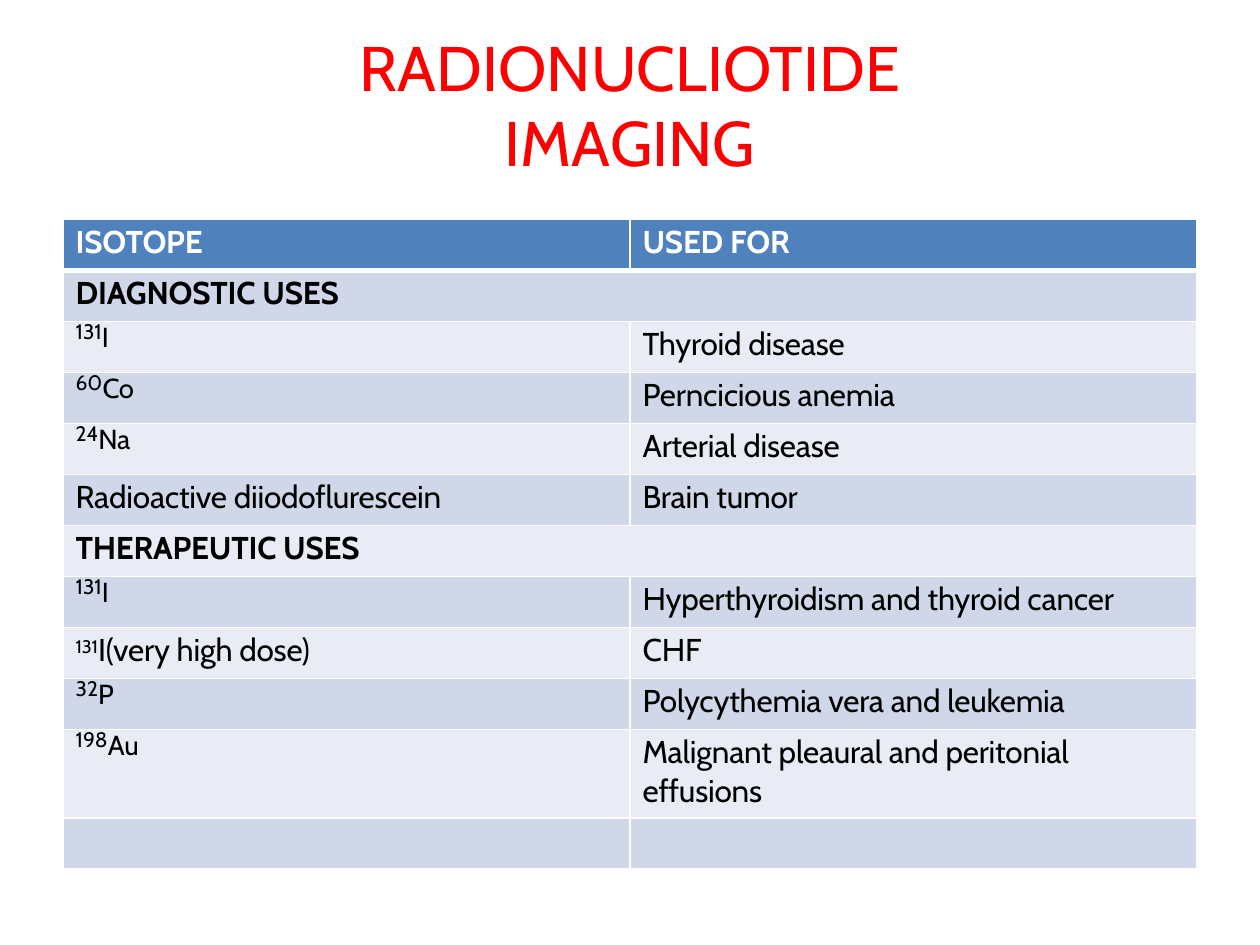
import dataclasses
import typing

import lxml.etree
import pptx
import pptx.dml.color
import pptx.enum.text
import pptx.oxml.ns
import pptx.util

Inches = pptx.util.Inches
Pt = pptx.util.Pt

FONT = "Cabin"
COLORS = {
    "title": "FF0000",
    "header": "4F81BC",
    "dark band": "D0D7E8",
    "light band": "E9ECF4",
    "white": "FFFFFF",
    "black": "000000",
}
TABLE_HEIGHT = 5.16
TALL_ROW = 0.7


@dataclasses.dataclass(frozen=True)
class Span:
    text: str
    size: int = 18
    bold: bool = False
    color: str = "black"
    baseline: int = 0
    spacing: int = -10


@dataclasses.dataclass(frozen=True)
class Entry:
    lines: tuple[tuple[Span, ...], ...]
    space_before: float = 2.5
    top: float = 0.03
    line_spacing: typing.Optional[float] = None


@dataclasses.dataclass(frozen=True)
class Row:
    entries: tuple[Entry, ...]
    height: typing.Optional[float] = None


def words(*lines: str, **style: typing.Any) -> Entry:
    return Entry(tuple((Span(line, **style),) for line in lines))


def isotope(mass: str, symbol: str) -> Entry:
    spans = (Span(mass, size=12, spacing=0), Span(symbol, size=27, baseline=-17, spacing=0))
    return Entry((spans,), space_before=0, top=0, line_spacing=18.6)


def section(text: str) -> Row:
    return Row((words(text, bold=True),))


HIGH_DOSE = Entry(((Span("131", baseline=25), Span("I(very high dose)")),))

ROWS = (
    Row((words("ISOTOPE", bold=True, color="white"), words("USED FOR", bold=True, color="white"))),
    section("DIAGNOSTIC USES"),
    Row((isotope("131", "I"), words("Thyroid disease"))),
    Row((isotope("60", "Co"), words("Perncicious anemia"))),
    Row((isotope("24", "Na"), words("Arterial disease"))),
    Row((words("Radioactive diiodoflurescein"), words("Brain tumor"))),
    section("THERAPEUTIC USES"),
    Row((isotope("131", "I"), words("Hyperthyroidism and thyroid cancer"))),
    Row((HIGH_DOSE, words("CHF"))),
    Row((isotope("32", "P"), words("Polycythemia vera and leukemia"))),
    Row((isotope("198", "Au"), words("Malignant pleaural and peritonial", "effusions")), TALL_ROW),
    Row((words(), words())),
)


def set_attributes(target: typing.Any, values: dict[str, typing.Any]) -> None:
    for name, value in values.items():
        setattr(target, name, value)


def rgb(name: str) -> pptx.dml.color.RGBColor:
    return pptx.dml.color.RGBColor.from_string(COLORS[name])


def add_span(para: typing.Any, span: Span) -> None:
    run = para.add_run()
    run.text = span.text
    set_attributes(run.font, {"name": FONT, "size": Pt(span.size), "bold": span.bold})
    run.font.color.rgb = rgb(span.color)
    properties = run.font._element
    if span.baseline:
        properties.set("baseline", str(span.baseline * 1000))
    if span.spacing:
        properties.set("spc", str(span.spacing))


def add_borders(cell: typing.Any, widths: dict[str, int]) -> None:
    properties = cell._tc.get_or_add_tcPr()
    qn = pptx.oxml.ns.qn
    for side, width in widths.items():
        line = lxml.etree.SubElement(properties, qn(f"a:ln{side}"), w=str(Pt(width)))
        fill = lxml.etree.SubElement(line, qn("a:solidFill"))
        lxml.etree.SubElement(fill, qn("a:srgbClr"), val=COLORS["white"])


def fill_cell(cell: typing.Any, entry: Entry) -> None:
    margins = {"margin_left": 0.1, "margin_right": 0, "margin_top": entry.top, "margin_bottom": 0}
    set_attributes(cell, {name: Inches(value) for name, value in margins.items()})
    frame = cell.text_frame
    for index, line in enumerate(entry.lines):
        para = frame.add_paragraph() if index else frame.paragraphs[0]
        para.alignment = pptx.enum.text.PP_ALIGN.LEFT
        para.space_before = Pt(0 if index else entry.space_before)
        if entry.line_spacing:
            para.line_spacing = Pt(entry.line_spacing)
        for span in line:
            add_span(para, span)


def add_isotope_table(page: typing.Any) -> None:
    frame = page.shapes.add_table(
        len(ROWS), 2, Inches(0.5), Inches(1.74), Inches(9), Inches(TABLE_HEIGHT)
    )
    table = frame.table
    normal_height = (TABLE_HEIGHT - TALL_ROW) / (len(ROWS) - 1)
    for index, row in enumerate(ROWS):
        table.rows[index].height = Inches(row.height or normal_height)
        band = "header" if index == 0 else "dark band" if index % 2 else "light band"
        widths = {"L": 1, "R": 1, "T": 3 if index == 1 else 1, "B": 3 if index == 0 else 1}
        for cell in table.rows[index].cells:
            add_borders(cell, widths)
            cell.fill.solid()
            cell.fill.fore_color.rgb = rgb(band)
        if len(row.entries) == 1:
            table.cell(index, 0).merge(table.cell(index, 1))
        for column, entry in enumerate(row.entries):
            fill_cell(table.cell(index, column), entry)


def add_title(page: typing.Any) -> None:
    box = page.shapes.title
    place = {"left": 1.99, "top": 0.51, "width": 6.02, "height": 0.62}
    set_attributes(box, {name: Inches(value) for name, value in place.items()})
    set_attributes(box.text_frame, {
        "margin_left": 0,
        "margin_right": 0,
        "margin_top": Inches(0.01),
        "margin_bottom": 0,
        "word_wrap": True,
        "vertical_anchor": pptx.enum.text.MSO_ANCHOR.MIDDLE,
        "auto_size": pptx.enum.text.MSO_AUTO_SIZE.SHAPE_TO_FIT_TEXT,
    })
    para = box.text_frame.paragraphs[0]
    para.alignment = pptx.enum.text.PP_ALIGN.CENTER
    add_span(para, Span("RADIONUCLIOTIDE IMAGING", size=36, color="title", spacing=0))


def main() -> None:
    deck = pptx.Presentation()
    set_attributes(deck, {"slide_width": Inches(10), "slide_height": Inches(7.5)})
    page = deck.slides.add_slide(deck.slide_layouts[5])
    add_title(page)
    add_isotope_table(page)
    deck.save("out.pptx")


if __name__ == "__main__":
    main()
